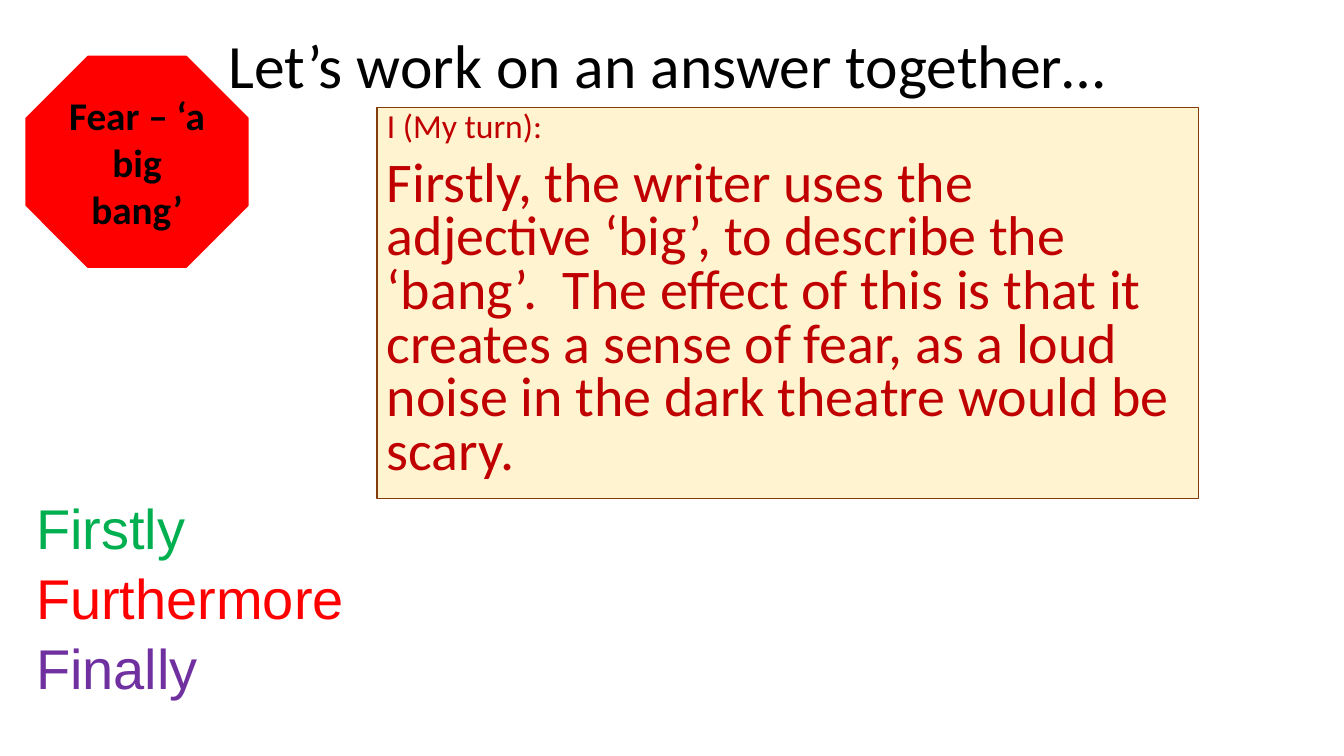
import pptx
import pptx.dml.color
import pptx.enum.shapes
import pptx.enum.text
import pptx.oxml.ns
import pptx.util
from lxml import etree

Pt = pptx.util.Pt
ALIGN = pptx.enum.text.PP_ALIGN
ANCHOR = pptx.enum.text.MSO_ANCHOR
SHAPE = pptx.enum.shapes.MSO_SHAPE


def rgb(hex_code):
    return pptx.dml.color.RGBColor.from_string(hex_code)


class LessonSlide:
    """Holds the lesson style and the slide being built."""

    font = "Calibri"
    ink = "000000"

    def __init__(self, slide):
        self.slide = slide

    def fill_text(self, frame, lines, anchor=ANCHOR.TOP, align=ALIGN.LEFT,
                  spacing=None, before=0, font=None, bold=False):
        frame.word_wrap = True
        frame.auto_size = pptx.enum.text.MSO_AUTO_SIZE.NONE
        frame.vertical_anchor = anchor
        for index, (words, size, color) in enumerate(lines):
            paragraph = frame.add_paragraph() if index else frame.paragraphs[0]
            paragraph.alignment = align
            paragraph.line_spacing = spacing
            paragraph.space_before = Pt(before if index else 0)
            run = paragraph.add_run()
            run.text = words
            run.font.name = font or self.font
            run.font.size = Pt(size)
            run.font.bold = bold
            run.font.color.rgb = rgb(color)

    def title(self, words, left, top, width, height):
        heading = self.slide.shapes.title
        heading.left, heading.top = Pt(left), Pt(top)
        heading.width, heading.height = Pt(width), Pt(height)
        self.fill_text(heading.text_frame, [(words, 44, self.ink)], ANCHOR.MIDDLE, spacing=0.9)

    def panel(self, kind, box, fill, line, line_width, lines, opacity=100, **style):
        panel = self.slide.shapes.add_shape(kind, *map(Pt, box))
        panel.shadow.inherit = False
        panel.fill.solid()
        panel.fill.fore_color.rgb = rgb(fill)
        if opacity < 100:
            color = panel.element.spPr.find(".//" + pptx.oxml.ns.qn("a:srgbClr"))
            etree.SubElement(color, pptx.oxml.ns.qn("a:alpha"), val=str(opacity * 1000))
        panel.line.color.rgb = rgb(line)
        panel.line.width = Pt(line_width)
        self.fill_text(panel.text_frame, lines, **style)

    def text(self, box, lines, **style):
        label = self.slide.shapes.add_textbox(*map(Pt, box))
        self.fill_text(label.text_frame, lines, **style)


def main():
    deck = pptx.Presentation()
    deck.slide_width, deck.slide_height = Pt(960), Pt(540)
    lesson = LessonSlide(deck.slides.add_slide(deck.slide_layouts[5]))

    lesson.title("Let’s work on an answer together…", 156, 21.6, 648, 55.4)

    model_answer = [
        ("I (My turn):", 24, "C00000"),
        ("Firstly, the writer uses the adjective ‘big’, to describe the ‘bang’.  "
         "The effect of this is that it creates a sense of fear, as a loud noise "
         "in the dark theatre would be scary.", 40, "C00000"),
    ]
    lesson.panel(SHAPE.RECTANGLE, (269.3, 77, 586.8, 279.4), "FFD966", "843C0B", 0.75,
                 model_answer, opacity=30, spacing=0.8, before=10)

    lesson.panel(SHAPE.OCTAGON, (18.7, 40.3, 158.4, 150.5), "FF0000", "FF0000", 1,
                 [("Fear – ‘a big bang’", 28, lesson.ink)],
                 anchor=ANCHOR.MIDDLE, align=ALIGN.CENTER, bold=True)

    connectives = {"Firstly": "00B050", "Furthermore": "FF0000", "Finally": "7030A0"}
    lesson.text((18.7, 347, 412.6, 152.6),
                [(word, 40, color) for word, color in connectives.items()],
                font="Arial", spacing=1.04)

    deck.save("out.pptx")


if __name__ == "__main__":
    main()
